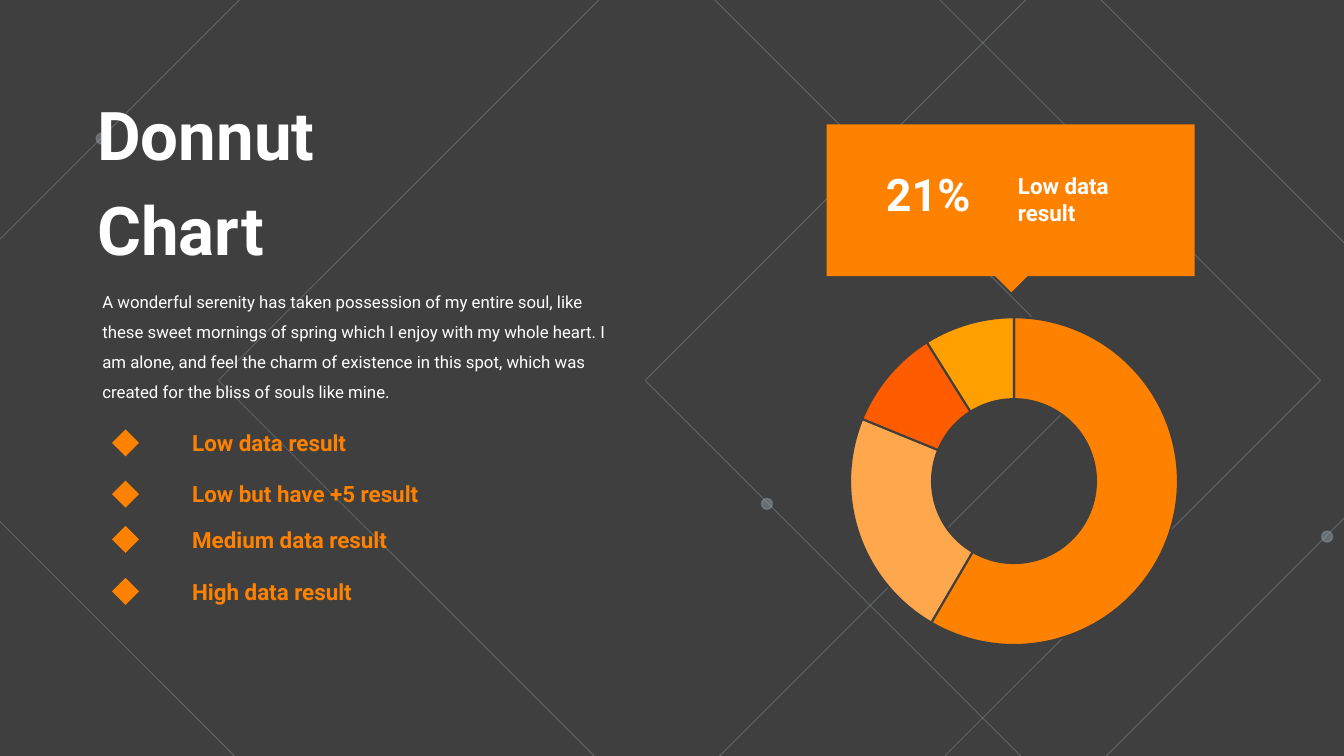
from lxml.etree import SubElement
from pptx import Presentation
from pptx.chart.data import CategoryChartData
from pptx.dml.color import RGBColor
from pptx.enum.chart import XL_CHART_TYPE
from pptx.enum.shapes import MSO_SHAPE
from pptx.enum.text import MSO_ANCHOR
from pptx.oxml import parse_xml
from pptx.oxml.ns import nsdecls, qn
from pptx.util import Inches, Pt

GREY = RGBColor(0x3F, 0x3F, 0x3F)
MIST = RGBColor(0xA5, 0xB4, 0xBB)
WHITE = RGBColor(0xFF, 0xFF, 0xFF)
ORANGE = RGBColor(0xFF, 0x81, 0x00)
PEACH = RGBColor(0xFF, 0xA7, 0x4C)
RED = RGBColor(0xFF, 0x5C, 0x00)
AMBER = RGBColor(0xFF, 0x9F, 0x00)

# Slide on a grid of 80 columns by 45 rows of square cells
deck = Presentation()
deck.slide_width, deck.slide_height = Inches(13.33), Inches(7.5)
CELL = deck.slide_width / 80
slide = deck.slides.add_slide(deck.slide_layouts[6])
slide.background.fill.solid()
slide.background.fill.fore_color.rgb = GREY
shapes = slide.shapes


def paint(shape, fill=None, line=None, width=0.75, clear=None):
    """Set fill and line; clear gives the opacity of each in percent."""
    shape.shadow.inherit = False
    for part, tone in ((shape.fill, fill), (shape.line.fill, line)):
        if tone is None:
            part.background()
        else:
            part.solid()
            part.fore_color.rgb = tone
    if line is not None:
        shape.line.width = Pt(width)
    if clear:
        tones = shape._element.spPr.iter(qn("a:srgbClr"))
        for tone, share in zip(tones, clear):
            SubElement(tone, qn("a:alpha"), val=str(share * 1000))


def write(box, lines, tone, font, para=None, anchor=MSO_ANCHOR.TOP):
    """Place a text box; box is left, top, width, height in cells."""
    frame = shapes.add_textbox(*[int(n * CELL) for n in box]).text_frame
    frame.word_wrap = True
    frame.vertical_anchor = anchor
    for i, line in enumerate(lines):
        item = frame.add_paragraph() if i else frame.paragraphs[0]
        for key, value in (para or {}).items():
            setattr(item, key, value)
        run = item.add_run()
        run.text = line
        run.font.color.rgb = tone
        for key, value in {"name": "Roboto", **font}.items():
            setattr(run.font, key, value)


# Outlines: three large diamonds, then the callout
MID = 22.65
rings = [[(x, MID + r), (x - r, MID), (x, MID - r), (x + r, MID)]
         for x, r in ((63.3, 24.9), (45.8, 32.8), (28.4, 36.8))]
LEFT, RIGHT, TOP, BASE, TIP = 49.2, 71.1, 7.4, 16.45, 60.2
label = [(LEFT, TOP), (RIGHT, TOP), (RIGHT, BASE), (TIP + 0.95, BASE),
         (TIP, BASE + 0.95), (TIP - 0.95, BASE), (LEFT, BASE)]
looks = [{"line": MIST, "clear": [29]}] * 3 + [{"fill": ORANGE}]
for points, look in zip(rings + [label], looks):
    spots = [(int(x * CELL), int(y * CELL)) for x, y in points]
    form = shapes.build_freeform(*spots[0])
    form.add_line_segments(spots[1:], close=True)
    paint(form.convert_to_shape(), **look)

# Dots on the diamond lines
DOT = 0.66
for x, y in ((45.65, 30), (79, 31.95), (6.05, 8.25)):
    place = (x - DOT / 2, y - DOT / 2, DOT, DOT)
    dot = shapes.add_shape(MSO_SHAPE.OVAL, *[int(n * CELL) for n in place])
    paint(dot, MIST, MIST, 1, (40, 29))

# Doughnut chart
data = CategoryChartData()
data.categories = ["1", "2", "3", "4"]
data.add_series("Series 1", (59, 23, 10, 9))
place = (44.2, 18, 32, 21.3)
chart = shapes.add_chart(XL_CHART_TYPE.DOUGHNUT,
                         *[int(n * CELL) for n in place], data).chart
chart.has_legend = chart.has_title = False
for key, value in {"name": "Roboto", "size": Pt(10)}.items():
    setattr(chart.font, key, value)
chart.font.color.rgb = WHITE
plot = chart.plots[0]
plot.vary_by_categories = True
for i, tone in enumerate((ORANGE, PEACH, RED, AMBER)):
    part = plot.series[0].points[i].format
    part.fill.solid()
    part.fill.fore_color.rgb = tone
    part.line.color.rgb = GREY
    part.line.width = Pt(1.5)

# Hole size and plot area of the doughnut
ring = plot._element
ring.find(qn("c:holeSize")).set("val", "75")
area = ring.getparent()
for old in area.findall(qn("c:layout")):
    area.remove(old)
area.insert(0, parse_xml(
    f'<c:layout {nsdecls("c")}><c:manualLayout><c:layoutTarget val="inner"/>'
    '<c:xMode val="edge"/><c:yMode val="edge"/><c:x val="0.2"/>'
    '<c:y val="0.04"/><c:w val="0.61"/><c:h val="0.92"/>'
    '</c:manualLayout></c:layout>'))

# Title and story
write((5.2, 5.2, 28.5, 11.2), ["Donnut", "Chart"], WHITE,
      {"size": Pt(48), "bold": True}, {"space_before": Pt(10)},
      MSO_ANCHOR.MIDDLE)
story = ("A wonderful serenity has taken possession of my entire soul, like "
         "these sweet mornings of spring which I enjoy with my whole heart. "
         "I am alone, and feel the charm of existence in this spot, which "
         "was created for the bliss of souls like mine.")
write((5.5, 16.45, 31.15, 7.7), [story], WHITE, {"size": Pt(12)},
      {"line_spacing": 1.5})

# Bullet rows
HEAD = {"size": Pt(16), "bold": True}
SIDE = 1.14
rows = {25.25: "Low data result", 28.3: "Low but have +5 result",
        31: "Medium data result", 34.1: "High data result"}
for top, words in rows.items():
    write((10.85, top, 19.4, 2.2), [words], ORANGE, HEAD)
    place = (6.9, top + 0.55, SIDE, SIDE)
    mark = shapes.add_shape(MSO_SHAPE.RECTANGLE,
                            *[int(n * CELL) for n in place])
    mark.rotation = 45
    paint(mark, ORANGE)

# Callout words
write((52.15, 9.65, 7.3, 3.85), ["21%"], WHITE, {"size": Pt(32), "bold": True})
write((60, 9.95, 7, 3.85), ["Low data result"], WHITE, HEAD)

deck.save("out.pptx")
